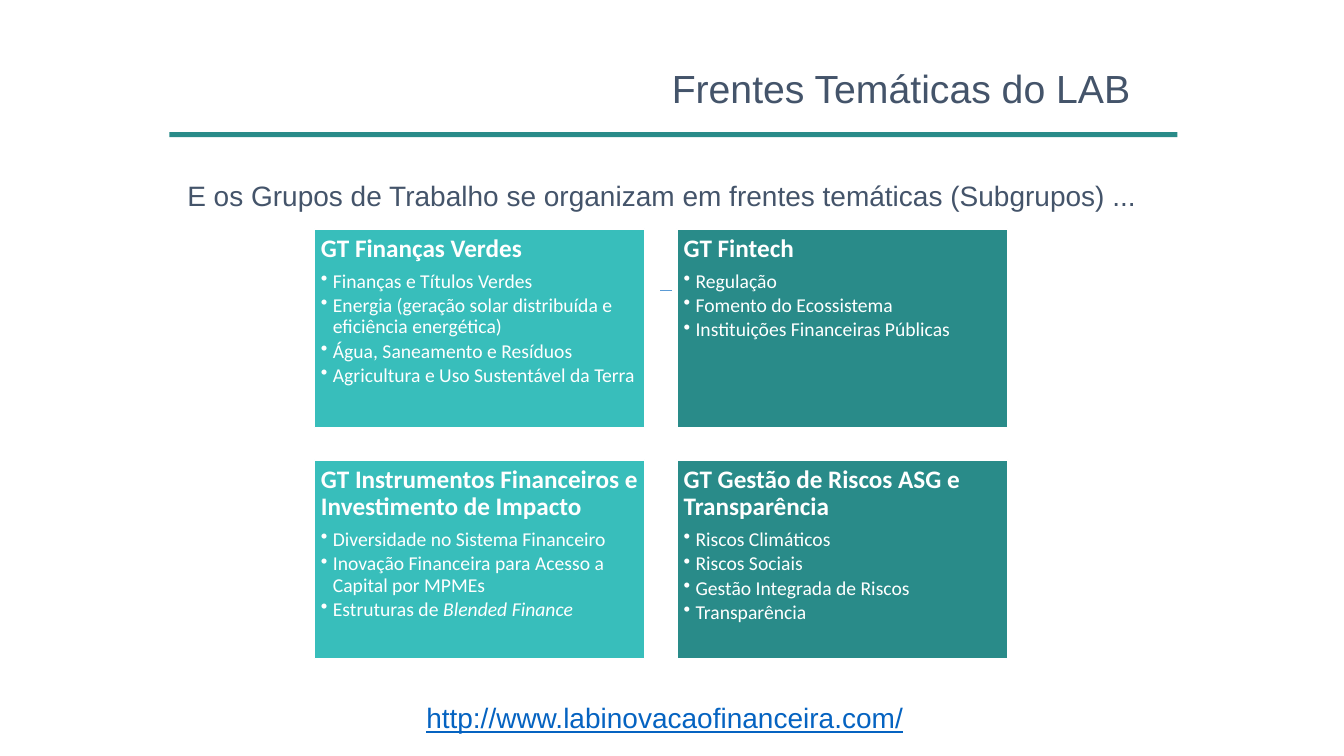
from dataclasses import dataclass

from lxml import etree
from pptx import Presentation
from pptx.dml.color import RGBColor
from pptx.enum.shapes import MSO_CONNECTOR, MSO_SHAPE
from pptx.enum.text import MSO_ANCHOR, PP_ALIGN
from pptx.oxml.ns import qn
from pptx.util import Cm, Pt

RECTANGLE = MSO_SHAPE.RECTANGLE
STRAIGHT = MSO_CONNECTOR.STRAIGHT
TOP = MSO_ANCHOR.TOP
LEFT, CENTER, RIGHT = PP_ALIGN.LEFT, PP_ALIGN.CENTER, PP_ALIGN.RIGHT


@dataclass(frozen=True)
class Theme:
    light_teal: RGBColor = RGBColor(0x38, 0xBE, 0xBB)
    dark_teal: RGBColor = RGBColor(0x29, 0x8B, 0x89)
    slate: RGBColor = RGBColor(0x44, 0x54, 0x6A)
    link: RGBColor = RGBColor(0x05, 0x63, 0xC1)
    dash: RGBColor = RGBColor(0x5B, 0x9B, 0xD5)
    white: RGBColor = RGBColor(0xFF, 0xFF, 0xFF)
    title_size: int = 28
    sentence_size: int = 20
    group_size: int = 18
    topic_size: int = 14
    sentence_font: str = "Arial"
    card_font: str = "Calibri"


@dataclass(frozen=True)
class Sentence:
    text: str
    left: float
    top: float
    width: float
    height: float
    size: int
    color: RGBColor
    align: PP_ALIGN
    line_spacing: float = 1
    space_after: int = 0
    underline: bool = False


@dataclass(frozen=True)
class WorkingGroup:
    name: str
    topics: tuple[str, ...]
    italic_ending: str = ""


THEME = Theme()
CARD_LEFT, CARD_TOP, CARD_WIDTH, CARD_HEIGHT = 7.92, 5.77, 8.33, 5.0
COLUMN_STEP, ROW_STEP = 9.14, 5.82
CARD_INSET, BULLET_INDENT = 0.17, 0.3

SENTENCES = (
    Sentence("Frentes Temáticas do LAB", 16.5, 1.5, 12.23, 1.45,
             THEME.title_size, THEME.slate, RIGHT),
    Sentence("E os Grupos de Trabalho se organizam em frentes temáticas (Subgrupos) ...",
             4.47, 3.53, 24.54, 1.7, THEME.sentence_size, THEME.slate, LEFT, 2, 6),
    Sentence("http://www.labinovacaofinanceira.com/", 4.27, 16.69, 24.97, 2.2,
             THEME.sentence_size, THEME.link, CENTER, 2, 6, True),
)

WORKING_GROUPS = (
    WorkingGroup("GT Finanças Verdes", (
        "Finanças e Títulos Verdes",
        "Energia (geração solar distribuída e eficiência energética)",
        "Água, Saneamento e Resíduos",
        "Agricultura e Uso Sustentável da Terra")),
    WorkingGroup("GT Fintech", (
        "Regulação",
        "Fomento do Ecossistema",
        "Instituições Financeiras Públicas")),
    WorkingGroup("GT Instrumentos Financeiros e Investimento de Impacto", (
        "Diversidade no Sistema Financeiro",
        "Inovação Financeira para Acesso a Capital por MPMEs",
        "Estruturas de "), "Blended Finance"),
    WorkingGroup("GT Gestão de Riscos ASG e Transparência", (
        "Riscos Climáticos",
        "Riscos Sociais",
        "Gestão Integrada de Riscos",
        "Transparência")),
)


def apply_format(target, values: dict) -> None:
    for attribute, value in values.items():
        setattr(target, attribute, value)


def add_run(paragraph, text: str, color: RGBColor, **font_values) -> None:
    run = paragraph.add_run()
    run.text = text
    apply_format(run.font, font_values)
    run.font.color.rgb = color


def add_bullet(paragraph) -> None:
    properties = paragraph._p.get_or_add_pPr()
    properties.set("marL", str(Cm(BULLET_INDENT)))
    properties.set("indent", str(-Cm(BULLET_INDENT)))
    etree.SubElement(properties, qn("a:buChar"), char="•")


def add_rectangle(slide, left: float, top: float, width: float, height: float,
                  color: RGBColor):
    rectangle = slide.shapes.add_shape(
        RECTANGLE, Cm(left), Cm(top), Cm(width), Cm(height))
    rectangle.shadow.inherit = False
    rectangle.fill.solid()
    rectangle.fill.fore_color.rgb = color
    rectangle.line.fill.background()
    return rectangle


def add_sentence(slide, sentence: Sentence) -> None:
    frame = slide.shapes.add_textbox(
        Cm(sentence.left), Cm(sentence.top),
        Cm(sentence.width), Cm(sentence.height)).text_frame
    frame.word_wrap = True
    paragraph = frame.paragraphs[0]
    apply_format(paragraph, {
        "alignment": sentence.align,
        "line_spacing": sentence.line_spacing,
        "space_after": Pt(sentence.space_after),
    })
    add_run(paragraph, sentence.text, sentence.color, name=THEME.sentence_font,
            size=Pt(sentence.size), underline=sentence.underline)


def add_card(slide, group: WorkingGroup, row: int, column: int) -> None:
    color = (THEME.light_teal, THEME.dark_teal)[column]
    card = add_rectangle(slide, CARD_LEFT + column * COLUMN_STEP,
                         CARD_TOP + row * ROW_STEP, CARD_WIDTH, CARD_HEIGHT, color)
    card.line.color.rgb = THEME.white
    card.line.width = Pt(1)
    frame = card.text_frame
    inset = Cm(CARD_INSET)
    apply_format(frame, {
        "word_wrap": True, "vertical_anchor": TOP,
        "margin_left": inset, "margin_top": inset,
        "margin_right": inset, "margin_bottom": inset,
    })
    heading = frame.paragraphs[0]
    apply_format(heading, {
        "alignment": LEFT, "line_spacing": 0.9, "space_after": Pt(6.3)})
    add_run(heading, group.name, THEME.white, name=THEME.card_font,
            size=Pt(THEME.group_size), bold=True)

    topic_font = {"name": THEME.card_font, "size": Pt(THEME.topic_size), "bold": False}
    for topic in group.topics:
        bullet = frame.add_paragraph()
        add_bullet(bullet)
        apply_format(bullet, {
            "level": 1, "alignment": LEFT,
            "line_spacing": 0.9, "space_after": Pt(2.1)})
        add_run(bullet, topic, THEME.white, **topic_font)
    if group.italic_ending:
        add_run(bullet, group.italic_ending, THEME.white, italic=True, **topic_font)


def add_dash(slide) -> None:
    """Draw the short thin line between the two upper cards."""
    dash = slide.shapes.add_connector(
        STRAIGHT, Cm(16.94), Cm(7.32), Cm(16.64), Cm(7.32))
    dash.line.color.rgb = THEME.dash
    dash.line.width = Pt(0.5)
    etree.SubElement(dash._element.spPr, qn("a:effectLst"))


def main() -> None:
    presentation = Presentation()
    presentation.slide_width = Cm(33.87)
    presentation.slide_height = Cm(19.05)
    slide = presentation.slides.add_slide(presentation.slide_layouts[6])

    add_rectangle(slide, 4.27, 3.33, 25.4, 0.13, THEME.dark_teal)
    for sentence in SENTENCES:
        add_sentence(slide, sentence)
    add_dash(slide)
    for index, group in enumerate(WORKING_GROUPS):
        add_card(slide, group, *divmod(index, 2))

    presentation.save("out.pptx")


if __name__ == "__main__":
    main()
